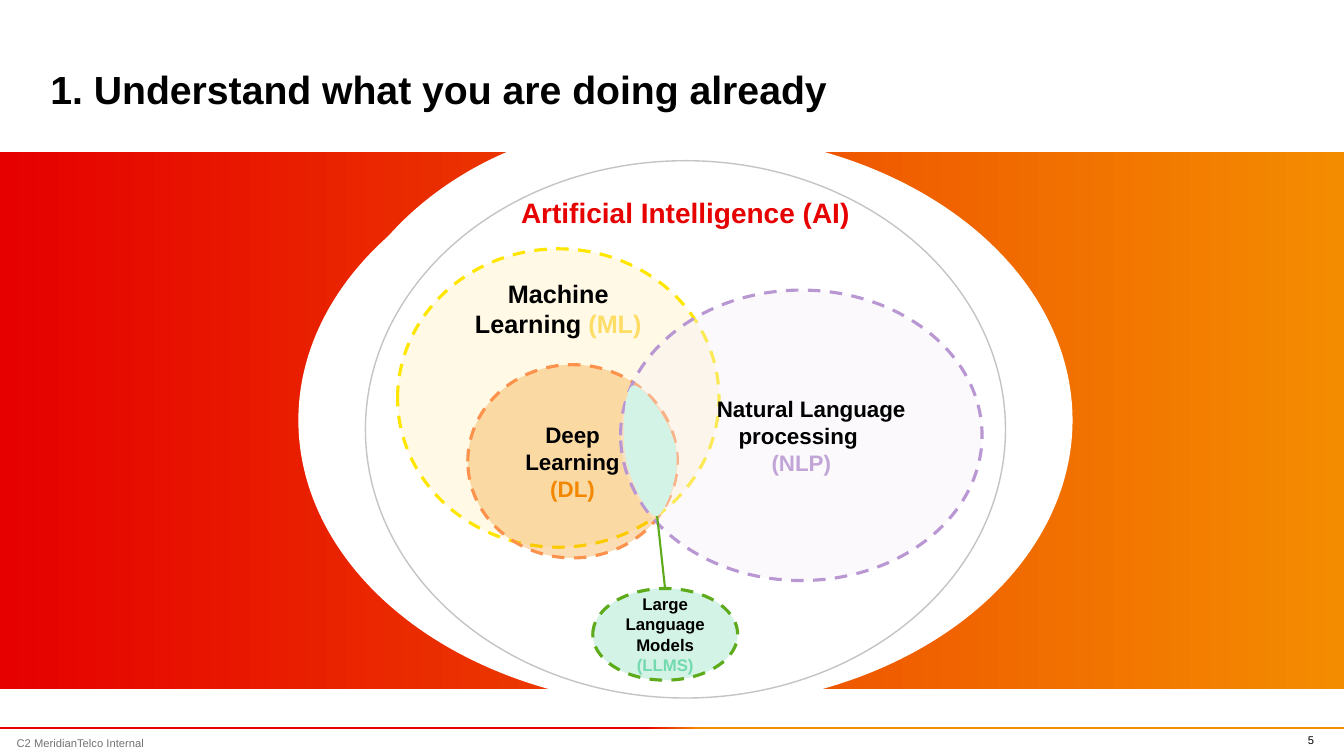
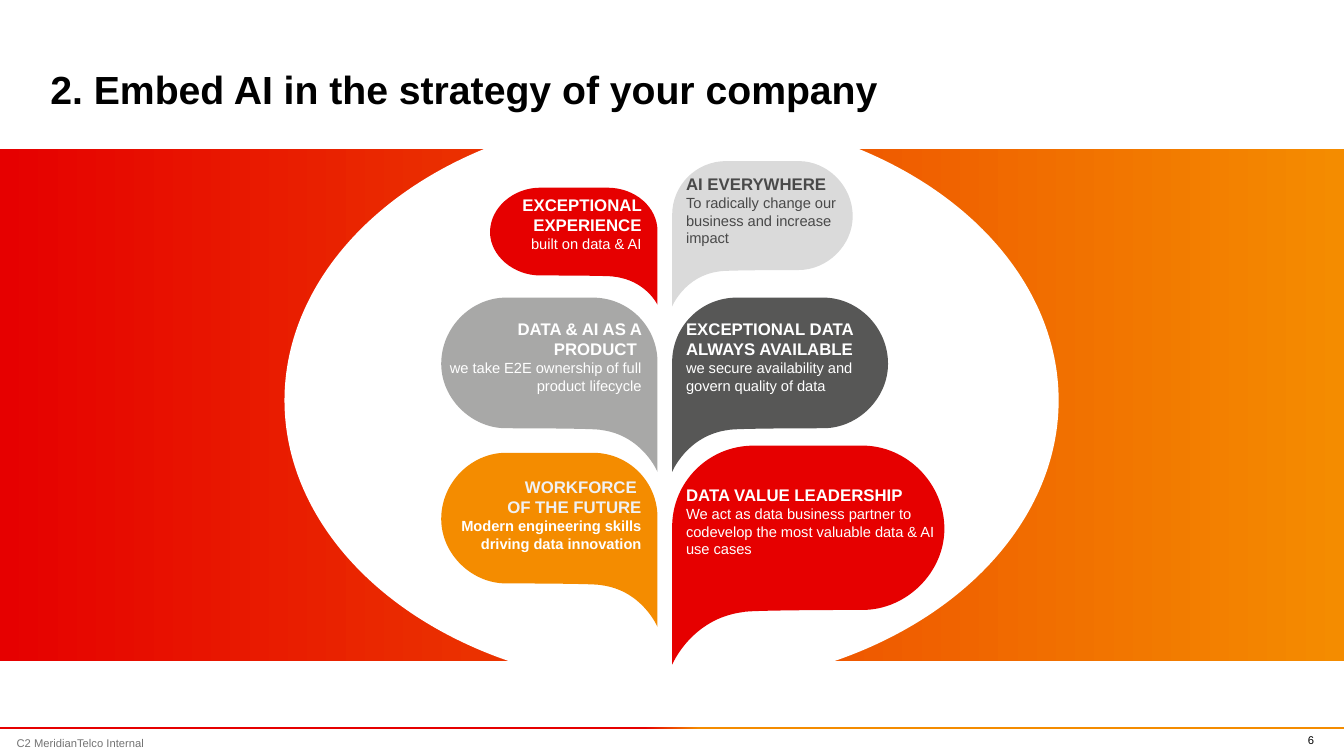
from lxml.etree import SubElement
from pptx import Presentation
from pptx.dml.color import RGBColor as Rgb
from pptx.enum.dml import MSO_LINE as Dash
from pptx.enum.shapes import MSO_CONNECTOR as Link, MSO_SHAPE as Geo
from pptx.enum.text import MSO_ANCHOR as Anchor, PP_ALIGN as Align
from pptx.oxml.ns import qn
from pptx.util import Cm, Pt

HUE = {
    "black": "000000", "white": "FFFFFF", "red": "E60000", "orange": "F48C00",
    "note": "737373", "ring": "C4C4C4", "cream": "FFF9E6", "yellow": "FFE600",
    "gold": "FDDD65", "coral": "FC924B", "amber": "F38700", "lilac": "F5EFF9",
    "purple": "B997D3", "violet": "C2A5D7", "mint": "D3F3E6", "green": "5DAA1A",
    "jade": "73D9AE", "pale": "DADADA", "grey": "A8A8A7", "dark": "575756",
    "ink": "494949", "snow": "F0F1F3",
}


def put(slide, box, text="", geo=None, fill=None, stops=(0, 1), alpha=None,
        line=None, width=2.25, dash=True, size=12, bold=False, ink="black",
        align=Align.LEFT, anchor=Anchor.TOP, pad=True, space=None):
    area = [Cm(n) for n in box]
    if geo is None:
        shape = slide.shapes.add_textbox(*area)
    else:
        shape = slide.shapes.add_shape(geo, *area)
        shape.shadow.inherit = False
        if fill is None:
            shape.fill.background()
        elif isinstance(fill, tuple):
            shape.fill.gradient()
            shape.fill.gradient_angle = 0
            for stop, tone, spot in zip(shape.fill.gradient_stops, fill, stops):
                stop.color.rgb = Rgb.from_string(HUE[tone])
                stop.position = spot
        else:
            shape.fill.solid()
            shape.fill.fore_color.rgb = Rgb.from_string(HUE[fill])
            if alpha:
                tone = shape._element.spPr.find(qn("a:solidFill"))[0]
                SubElement(tone, qn("a:alpha"), val=str(alpha * 1000))
        if line:
            shape.line.color.rgb = Rgb.from_string(HUE[line])
            shape.line.width = Pt(width)
            if dash:
                shape.line.dash_style = Dash.DASH
        else:
            shape.line.fill.background()
    if not text:
        return shape
    frame = shape.text_frame
    frame.word_wrap = True
    frame.vertical_anchor = anchor
    if not pad:
        frame.margin_left = frame.margin_right = 0
        frame.margin_top = frame.margin_bottom = 0
    rows = [[(text, {})]] if isinstance(text, str) else text
    for i, row in enumerate(rows):
        para = frame.add_paragraph() if i else frame.paragraphs[0]
        para.alignment = align
        if space:
            para.line_spacing = space
        for words, look in row:
            for n, piece in enumerate(words.split("\n")):
                if n:
                    para.add_line_break()
                if piece:
                    run = para.add_run()
                    run.text = piece
                    font = run.font
                    font.name = "Arial"
                    font.size = Pt(look.get("size", size))
                    font.bold = look.get("bold", bold)
                    font.color.rgb = Rgb.from_string(HUE[look.get("ink", ink)])
    return shape


def trace(slide, box, points, fill, flip=False):
    left, top, wide, tall = box
    spots = [(Cm(left + wide * (1 - x if flip else x)), Cm(top + tall * y)) for x, y in points]
    build = slide.shapes.build_freeform(*spots[0], scale=1.0)
    build.add_line_segments(spots[1:], close=True)
    shape = build.convert_to_shape()
    steps = list(shape._element.iter(qn("a:lnTo")))
    for n in range(0, len(steps), 3):
        curve = SubElement(steps[n].getparent(), qn("a:cubicBezTo"))
        steps[n].addprevious(curve)
        for step in steps[n:n + 3]:
            curve.append(step[0])
            step.getparent().remove(step)
    shape.shadow.inherit = False
    shape.fill.solid()
    shape.fill.fore_color.rgb = Rgb.from_string(HUE[fill])
    shape.line.fill.background()


deck = Presentation()
deck.slide_width, deck.slide_height = Cm(33.87), Cm(19.05)

PAGES = [
    ("5", "1. Understand what you are doing already", 3.82, 13.55,
     [(7.52, 3.35), (8.08, 3.02)]),
    ("6", "2. Embed AI in the strategy of your company", 3.76, 12.9,
     [(7.17, 2.85), (8.54, 2.77)]),
]
slides = []
for page, title, top, tall, ovals in PAGES:
    slide = deck.slides.add_slide(deck.slide_layouts[6])
    slides.append(slide)
    put(slide, (32.1, 18.49, 1.02, 0.33), page, size=8, align=Align.RIGHT, pad=False)
    put(slide, (0, 18.33, 33.87, 0.05), geo=Geo.RECTANGLE,
        fill=("red", "orange"), stops=(0.48, 0.52))
    put(slide, (0.42, 18.4, 3.8, 0.64), "C2 MeridianTelco Internal", size=8,
        ink="note", anchor=Anchor.MIDDLE, pad=False)
    put(slide, (0, top, 33.87, tall), geo=Geo.RECTANGLE, fill=("red", "orange"))
    for (x, y), wide in zip(ovals, (19.51, 17.37)):
        put(slide, (x, y, wide, 14.48), geo=Geo.OVAL, fill="white")
    put(slide, (1.27, 0.76, 31.32, 2.08), title, size=28, bold=True,
        anchor=Anchor.BOTTOM, pad=False, space=0.9)

venn, plan = slides

put(venn, (9.21, 4.05, 16.13, 13.54), geo=Geo.OVAL, line="ring", width=1, dash=False)
CIRCLES = [
    ((10.02, 6.27, 8.1, 7.52), "cream", None, "yellow", 18,
     [[("Machine Learning ", {}), ("(ML)", {"ink": "gold"})]]),
    ((11.79, 9.19, 5.28, 4.87), "orange", 29, "coral", 16,
     [[("Deep Learning ", {}), ("(DL)", {"ink": "amber"})]]),
    ((15.64, 7.31, 9.11, 7.32), "lilac", 35, "purple", 16,
     [[("Natural Language processing ", {})], [("(NLP)", {"ink": "violet"})]]),
    ((14.94, 14.83, 3.65, 2.31), "mint", None, "green", 12,
     [[("Large Language Models ", {}), ("(LLMS)", {"ink": "jade"})]]),
]
for box, fill, alpha, line, size, text in CIRCLES:
    oval = put(venn, box, text, geo=Geo.OVAL, fill=fill, alpha=alpha, line=line,
               size=size, bold=True, align=Align.CENTER, anchor=Anchor.MIDDLE)
    frame = oval.text_frame
    if fill == "cream":
        frame.margin_top, frame.margin_bottom = 0, Cm(4.5)
    if fill == "lilac":
        first = frame.paragraphs[0]._p.get_or_add_pPr()
        first.set("marL", "0")
        first.set("indent", str(Cm(0.5)))

stem = venn.shapes.add_connector(Link.STRAIGHT, Cm(16.56), Cm(13), Cm(16.76), Cm(14.83))
stem.line.color.rgb = Rgb.from_string(HUE["green"])
stem.line.width = Pt(1.5)
SubElement(stem._element.spPr, qn("a:effectLst"))
put(venn, (12.36, 4.8, 9.83, 1.09), "Artificial Intelligence (AI)", size=20, bold=True,
    ink="red", align=Align.CENTER, anchor=Anchor.BOTTOM)

LENS = [(0.04, 0.57), (-0.04, 0.41), (0, 0.03), (0.18, 0.02),
        (0.33, 0), (0.86, 0.25), (1, 0.47), (1.12, 0.68), (0.8, 0.98), (0.65, 1),
        (0.47, 1.02), (0.12, 0.73), (0.04, 0.57)]
trace(venn, (15.72, 9.65, 1.3, 3.35), LENS, "mint")

LEAF = [(0.7, 0), (0.7, 0), (0.3, 0), (0.3, 0),
        (0.13, 0), (0, 0.17), (0, 0.37), (0, 0.58), (0, 1), (0, 1),
        (0, 1), (0.07, 0.79), (0.26, 0.76), (0.28, 0.75), (0.7, 0.75), (0.7, 0.75),
        (0.86, 0.75), (1, 0.58), (1, 0.38), (1, 0.17), (0.86, 0), (0.7, 0)]
LEAVES = [
    (False, 7.5, 5.44, 4.39, "dark", 7.9, 5.44, "white",
     "EXCEPTIONAL DATA ALWAYS AVAILABLE\n",
     "we secure availability and govern quality of data"),
    (True, 7.5, 5.45, 4.39, "grey", 7.9, 5.46, "white",
     "DATA & AI AS A PRODUCT \n",
     "we take E2E ownership of full product lifecycle"),
    (False, 4.06, 4.55, 3.66, "pale", 4.25, 4.55, "ink",
     "AI EVERYWHERE\n",
     "To radically change our business and increase impact"),
    (True, 11.41, 5.45, 4.39, "orange", 11.89, 5.79, "snow",
     "WORKFORCE \nOF THE FUTURE\n",
     "Modern engineering skills driving data innovation"),
    (False, 11.23, 6.86, 5.52, "red", 12.09, 7.06, "white",
     "DATA VALUE LEADERSHIP\n",
     "We act as data business partner to codevelop the most valuable data & AI use cases"),
    (True, 4.73, 4.22, 2.95, "red", 4.78, 4.22, "white",
     "EXCEPTIONAL EXPERIENCE\n",
     "built on data & AI"),
]
for flip, top, wide, tall, fill, *_ in LEAVES:
    trace(plan, (16.57 - wide if flip else 16.94, top, wide, tall), LEAF, fill, flip)
for flip, _, _, _, fill, high, span, ink, head, body in LEAVES:
    strong = fill == "orange"
    look = {"size": 10.5, "bold": strong, "ink": "white" if strong else ink}
    put(plan, (16.42 - span if flip else 17.04, high, span, 2.2),
        [[(head, {"bold": True}), (body, look)]], ink=ink,
        align=Align.RIGHT if flip else Align.LEFT)

deck.save("out.pptx")
